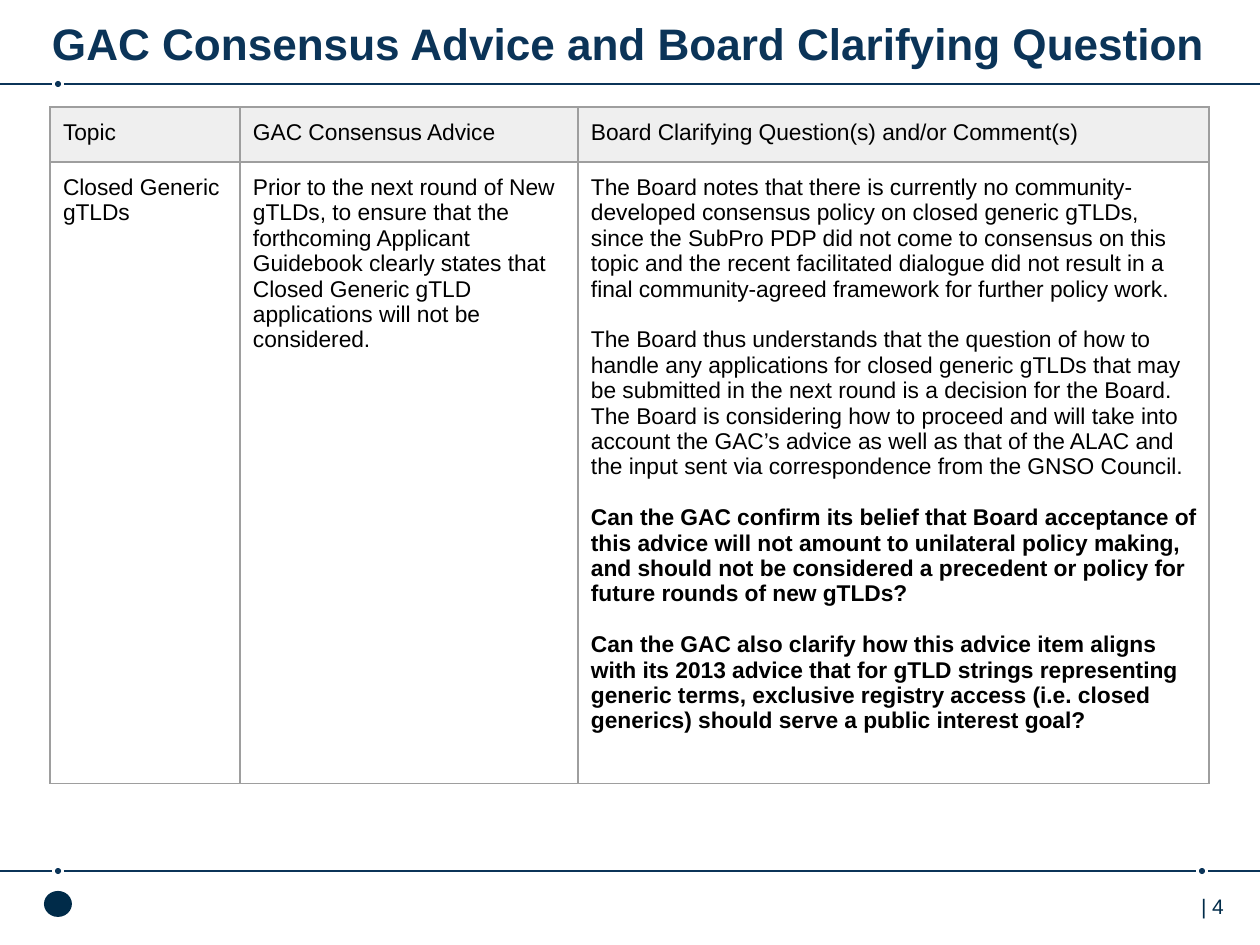
from lxml.etree import SubElement
from pptx import Presentation
from pptx.dml.color import RGBColor
from pptx.enum.shapes import MSO_CONNECTOR, MSO_SHAPE
from pptx.enum.text import MSO_ANCHOR, MSO_AUTO_SIZE, PP_ALIGN
from pptx.oxml.ns import qn
from pptx.util import Emu, Pt

EMU_PER_PX = 914400 / 126
SLIDE_WIDTH, SLIDE_HEIGHT = 1260, 945
FONT = "Arial"
COLORS = {
    "navy": "0B3458",
    "ink": "002B49",
    "text": "000000",
    "header": "EFEFEF",
    "border": "9E9E9E",
}

TITLE = "GAC Consensus Advice and Board Clarifying Question"
HEADERS = ["Topic", "GAC Consensus Advice", "Board Clarifying Question(s) and/or Comment(s)"]
TOPIC = "Closed Generic gTLDs"
ADVICE = (
    "Prior to the next round of New gTLDs, to ensure that the forthcoming Applicant "
    "Guidebook clearly states that Closed Generic gTLD applications will not be considered."
)
BOARD_COMMENTS = [
    "The Board notes that there is currently no community-developed consensus policy on "
    "closed generic gTLDs, since the SubPro PDP did not come to consensus on this topic and "
    "the recent facilitated dialogue did not result in a final community-agreed framework "
    "for further policy work.",
    "The Board thus understands that the question of how to handle any applications for "
    "closed generic gTLDs that may be submitted in the next round is a decision for the "
    "Board. The Board is considering how to proceed and will take into account the GAC’s "
    "advice as well as that of the ALAC and the input sent via correspondence from the "
    "GNSO Council.",
]
BOARD_QUESTIONS = [
    "Can the GAC confirm its belief that Board acceptance of this advice will not amount to "
    "unilateral policy making, and should not be considered a precedent or policy for "
    "future rounds of new gTLDs?",
    "Can the GAC also clarify how this advice item aligns with its 2013 advice that for gTLD "
    "strings representing generic terms, exclusive registry access (i.e. closed generics) "
    "should serve a public interest goal?",
]


def px(length):
    return Emu(round(length * EMU_PER_PX))


def rgb(name):
    return RGBColor.from_string(COLORS[name])


class SlideBuilder:
    """Holds the style and the slide being built."""

    def __init__(self, slide):
        self.slide = slide

    def style_paragraph(self, paragraph, size, color, bold=False):
        paragraph.alignment = PP_ALIGN.LEFT
        for run in paragraph.runs:
            run.font.name = FONT
            run.font.size = Pt(size)
            run.font.bold = bold
            run.font.color.rgb = rgb(color)

    def place(self, shape, left, top, width, height):
        shape.left, shape.top = px(left), px(top)
        shape.width, shape.height = px(width), px(height)

    def set_margins(self, target, left, top, right, bottom):
        target.margin_left, target.margin_top = px(left), px(top)
        target.margin_right, target.margin_bottom = px(right), px(bottom)

    def title(self, text, left, top, width, height):
        shape = self.slide.shapes.title
        self.place(shape, left, top, width, height)
        frame = shape.text_frame
        frame.text = text
        frame.word_wrap = True
        frame.auto_size = MSO_AUTO_SIZE.NONE
        frame.vertical_anchor = MSO_ANCHOR.TOP
        self.set_margins(frame, 0, 10, 0, 0)
        self.style_paragraph(frame.paragraphs[0], 25.2, "navy", bold=True)

    def label(self, text, left, top, width, height):
        frame = self.slide.shapes.add_textbox(px(left), px(top), px(width), px(height)).text_frame
        frame.text = text
        frame.word_wrap = True
        self.set_margins(frame, 13, 6, 13, 6)
        self.style_paragraph(frame.paragraphs[0], 12, "ink")

    def ellipse(self, left, top, width, height, color):
        shape = self.slide.shapes.add_shape(
            MSO_SHAPE.OVAL, px(left), px(top), px(width), px(height))
        shape.shadow.inherit = False
        shape.fill.solid()
        shape.fill.fore_color.rgb = rgb(color)
        shape.line.fill.background()

    def line(self, start, end, y):
        connector = self.slide.shapes.add_connector(
            MSO_CONNECTOR.STRAIGHT, px(start), px(y), px(end), px(y))
        connector.line.color.rgb = rgb("navy")
        connector.line.width = Pt(1)
        SubElement(connector._element.spPr, qn("a:effectLst"))

    def dotted_rule(self, y, dot_centers, radius=3, gap=6):
        """Draw a full-width rule that breaks around each dot."""
        start = 0
        for center in dot_centers:
            self.line(start, center - gap, y)
            self.ellipse(center - radius, y - radius, 2 * radius, 2 * radius, "navy")
            start = center + gap
        self.line(start, SLIDE_WIDTH, y)

    def border_cell(self, cell):
        properties = cell._tc.get_or_add_tcPr()
        for side in ("lnL", "lnR", "lnT", "lnB"):
            border = SubElement(properties, qn(f"a:{side}"), w=str(Pt(0.75)))
            fill = SubElement(border, qn("a:solidFill"))
            SubElement(fill, qn("a:srgbClr"), val=COLORS["border"])

    def fill_cell(self, cell, entries, is_header):
        """Write (text, bold) entries as paragraphs one line apart."""
        self.border_cell(cell)
        if is_header:
            cell.fill.solid()
            cell.fill.fore_color.rgb = rgb("header")
        else:
            cell.fill.background()
        self.set_margins(cell, 13, 13, 13, 13)
        cell.vertical_anchor = MSO_ANCHOR.TOP
        frame = cell.text_frame
        for index, (text, bold) in enumerate(entries):
            paragraph = frame.add_paragraph() if index else frame.paragraphs[0]
            paragraph.text = text
            paragraph.space_before = Pt(14.5 if index else 0)
            self.style_paragraph(paragraph, 13, "text", bold)

    def table(self, rows, left, top, column_widths, row_heights):
        table = self.slide.shapes.add_table(
            len(rows), len(column_widths), px(left), px(top),
            px(sum(column_widths)), px(sum(row_heights))).table
        table.first_row = table.horz_banding = False
        for column, width in zip(table.columns, column_widths):
            column.width = px(width)
        for row_index, (row, height) in enumerate(zip(rows, row_heights)):
            table.rows[row_index].height = px(height)
            for column_index, entries in enumerate(row):
                self.fill_cell(table.cell(row_index, column_index), entries, row_index == 0)


def main():
    presentation = Presentation()
    presentation.slide_width, presentation.slide_height = px(SLIDE_WIDTH), px(SLIDE_HEIGHT)
    builder = SlideBuilder(presentation.slides.add_slide(presentation.slide_layouts[5]))

    builder.dotted_rule(84, [58])
    builder.dotted_rule(871, [58, 1202])
    builder.ellipse(44, 891, 28, 26, "ink")
    builder.label("| 4", 1188, 888, 72, 50)
    builder.title(TITLE, 52, 6, 1208, 62)

    board_cell = [(text, False) for text in BOARD_COMMENTS]
    board_cell += [(text, True) for text in BOARD_QUESTIONS]
    rows = [
        [[(header, False)] for header in HEADERS],
        [[(TOPIC, False)], [(ADVICE, False)], board_cell],
    ]
    builder.table(rows, 50, 107, [190, 338, 631], [55, 584])
    presentation.save("out.pptx")


if __name__ == "__main__":
    main()
